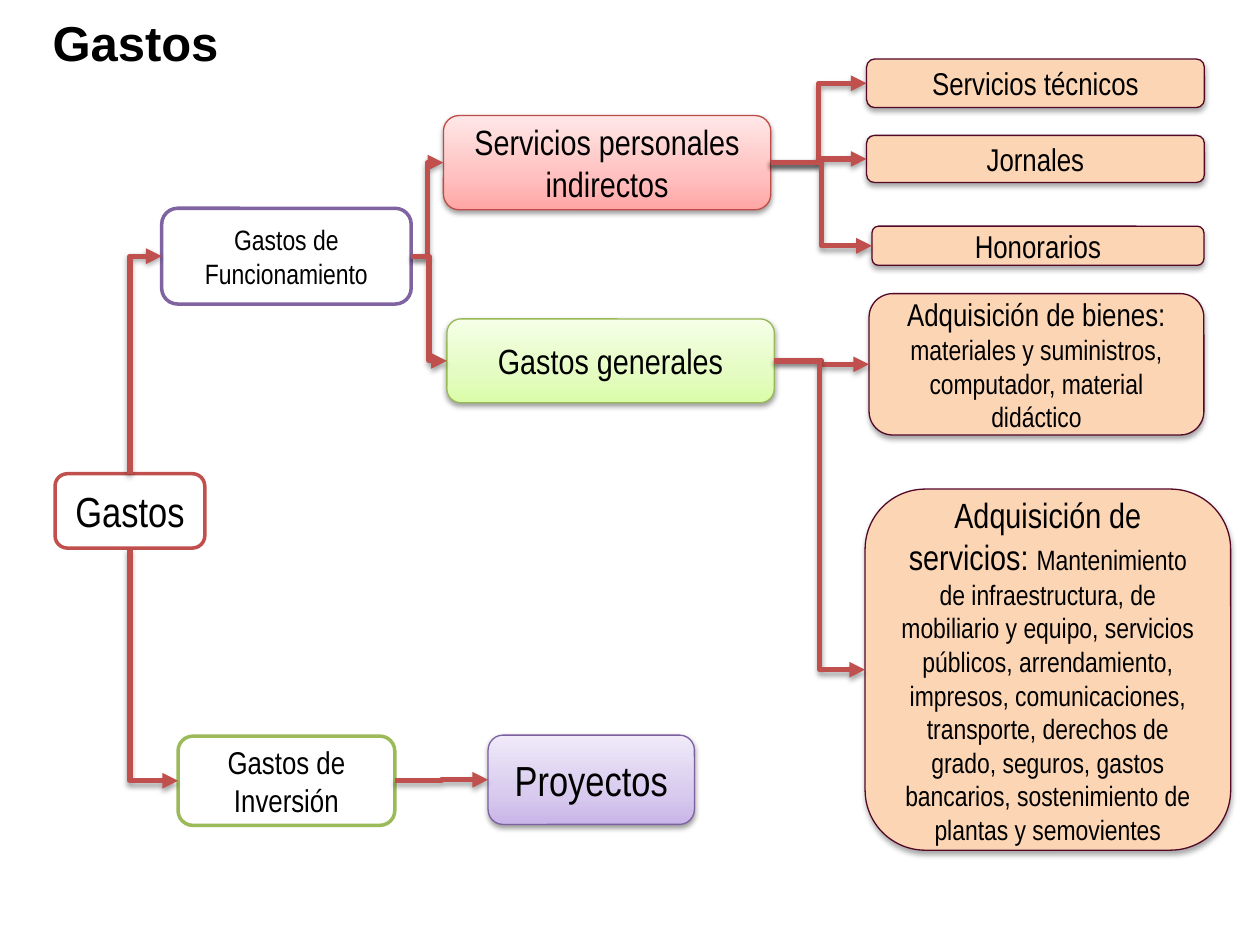
from dataclasses import dataclass

from lxml.etree import SubElement
from pptx import Presentation
from pptx.dml.color import RGBColor
from pptx.enum.shapes import MSO_CONNECTOR as CXN, MSO_SHAPE as SHAPE
from pptx.enum.text import MSO_ANCHOR as ANCHOR, PP_ALIGN as ALIGN
from pptx.oxml.ns import qn
from pptx.util import Cm, Pt

FONT = "Arial Narrow"
BLACK, WHITE, RED = "000000", "FFFFFF", "C0504D"
PEACH, WINE = "FCD5B5", "540828"
PINKS = ("FFA6A5", "FFC0BF", "FFE7E7")
GREENS = ("DAFDA7", "E4FCC2", "F5FFE7")
PURPLES = ("C9B5E8", "D8CBEE", "F0EAF9")
TOP, LEFT, BOTTOM, RIGHT = range(4)


@dataclass
class Box:
    key: str
    at: tuple[float, float, float, float]
    runs: list[tuple[str, int]]
    line: str
    fill: str | tuple[str, str, str] = WHITE
    width: float = 0.75


@dataclass
class Link:
    start: str
    end: str
    site: int = RIGHT


BOXES = [
    Box("gastos", (1.11, 9.55, 3.02, 1.5), [("Gastos", 24)], RED, width=2),
    Box("funcionamiento", (3.26, 4.2, 5.03, 1.93),
        [("Gastos de Funcionamiento", 16)], "8064A2", width=2),
    Box("inversion", (3.59, 14.84, 4.37, 1.8),
        [("Gastos de Inversión", 18)], "9BBB59", width=2),
    Box("personales", (8.94, 2.33, 6.6, 1.9),
        [("Servicios personales indirectos", 20)], "BF4C48", PINKS),
    Box("generales", (9.01, 6.43, 6.6, 1.69), [("Gastos generales", 20)], "98B955", GREENS),
    Box("proyectos", (9.84, 14.82, 4.16, 1.8), [("Proyectos", 24)], "7D60A0", PURPLES),
    Box("tecnicos", (17.47, 1.19, 6.81, 0.98), [("Servicios técnicos", 18)], WINE, PEACH),
    Box("jornales", (17.47, 2.73, 6.81, 0.95), [("Jornales", 18)], WINE, PEACH),
    Box("honorarios", (17.58, 4.56, 6.69, 0.79), [("Honorarios", 18)], WINE, PEACH),
    Box("bienes", (17.52, 5.92, 6.75, 2.85),
        [("Adquisición de bienes: ", 18),
         ("materiales y suministros, computador, material didáctico", 16)], WINE, PEACH),
    Box("servicios", (17.44, 9.86, 7.37, 7.28),
        [("Adquisición de servicios: ", 20),
         ("Mantenimiento de infraestructura, de mobiliario y equipo, servicios públicos, "
          "arrendamiento, impresos, comunicaciones, transporte, derechos de grado, seguros, "
          "gastos bancarios, sostenimiento de plantas y semovientes", 16)], WINE, PEACH),
]

LINKS = [
    Link("funcionamiento", "personales"),
    Link("personales", "tecnicos"),
    Link("personales", "jornales"),
    Link("personales", "honorarios"),
    Link("funcionamiento", "generales"),
    Link("generales", "bienes"),
    Link("generales", "servicios"),
    Link("gastos", "funcionamiento", TOP),
    Link("gastos", "inversion", BOTTOM),
    Link("inversion", "proyectos"),
]


def rgb(value: str) -> RGBColor:
    return RGBColor.from_string(value)


def add_shadow(effects, alpha: int, dist: float) -> None:
    shadow = SubElement(effects, qn("a:outerShdw"), blurRad=str(Pt(3.1)),
                        dist=str(Pt(dist)), dir="5400000", rotWithShape="0")
    color = SubElement(shadow, qn("a:srgbClr"), val=BLACK)
    SubElement(color, qn("a:alpha"), val=str(alpha * 1000))


def add_run(p, text: str, size: int, font: str = FONT, bold: bool = False) -> None:
    r = p.add_run()
    r.text = text
    r.font.size, r.font.name, r.font.bold = Pt(size), font, bold
    r.font.color.rgb = rgb(BLACK)


def fill_gradient(sp, colors: tuple[str, str, str]) -> None:
    sp.fill.gradient()
    sp.fill.gradient_angle = 90
    stops = sp._element.spPr.find(qn("a:gradFill")).find(qn("a:gsLst"))
    for stop in list(stops):
        stops.remove(stop)
    for pos, color in zip((0, 35, 100), colors):
        stop = SubElement(stops, qn("a:gs"), pos=str(pos * 1000))
        SubElement(stop, qn("a:srgbClr"), val=color)


def add_box(s, box: Box):
    sp = s.shapes.add_shape(SHAPE.ROUNDED_RECTANGLE, *map(Cm, box.at))
    gradient = isinstance(box.fill, tuple)
    if gradient:
        fill_gradient(sp, box.fill)
    else:
        sp.fill.solid()
        sp.fill.fore_color.rgb = rgb(box.fill)
    sp.line.color.rgb = rgb(box.line)
    sp.line.width = Pt(box.width)
    sp.shadow.inherit = False
    if box.fill != WHITE:
        effects = sp._element.spPr.find(qn("a:effectLst"))
        add_shadow(effects, *((38, 1.6) if gradient else (35, 1.8)))
    tf = sp.text_frame
    tf.word_wrap = True
    tf.vertical_anchor = ANCHOR.MIDDLE
    p = tf.paragraphs[0]
    p.alignment = ALIGN.CENTER
    for text, size in box.runs:
        add_run(p, text, size)
    return sp


def turn_corner(c, site: int) -> None:
    spPr = c._element.spPr
    spPr.find(qn("a:prstGeom")).set("prst", "bentConnector2")
    shift = (c.width - c.height) // 2
    c.left, c.top = c.left + shift, c.top - shift
    c.width, c.height = c.height, c.width
    xfrm = spPr.find(qn("a:xfrm"))
    xfrm.set("rot", "5400000" if site == TOP else "16200000")
    xfrm.set("flipH", "1")
    xfrm.set("flipV", "1" if site == TOP else "0")


def add_link(s, link: Link, boxes: dict) -> None:
    c = s.shapes.add_connector(CXN.ELBOW, 0, 0, 0, 0)
    c.begin_connect(boxes[link.start], link.site)
    c.end_connect(boxes[link.end], LEFT)
    if link.site != RIGHT:
        turn_corner(c, link.site)
    c.line.color.rgb = rgb(RED)
    c.line.width = Pt(3)
    spPr = c._element.spPr
    SubElement(spPr.find(qn("a:ln")), qn("a:tailEnd"), type="triangle")
    add_shadow(SubElement(spPr, qn("a:effectLst")), 35, 1.8)


def add_title(s, text: str) -> None:
    tf = s.shapes.add_textbox(Cm(0.81), Cm(0), Cm(22.86), Cm(1.69)).text_frame
    tf.word_wrap = True
    tf.vertical_anchor = ANCHOR.MIDDLE
    add_run(tf.paragraphs[0], text, 28, "Arial", True)


def main() -> None:
    prs = Presentation()
    prs.slide_width, prs.slide_height = Cm(25.4), Cm(19.05)
    s = prs.slides.add_slide(prs.slide_layouts[6])
    boxes = {box.key: add_box(s, box) for box in BOXES}
    add_title(s, "Gastos")
    for link in LINKS:
        add_link(s, link, boxes)
    prs.save("out.pptx")


if __name__ == "__main__":
    main()
